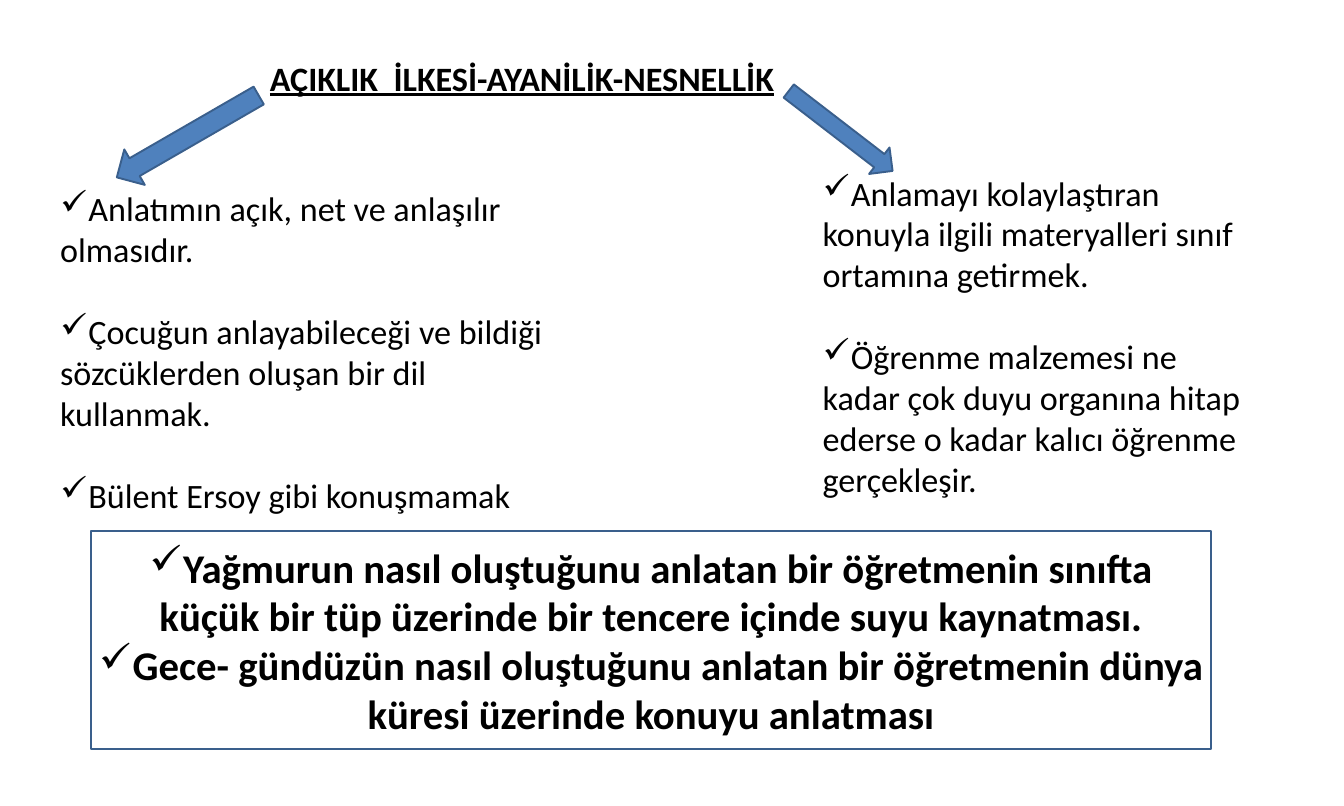
import pptx
import pptx.dml.color
import pptx.enum.shapes
import pptx.enum.text
import pptx.util
from dataclasses import dataclass
from lxml import etree
from pptx.oxml.ns import qn

Pt = pptx.util.Pt
RGBColor = pptx.dml.color.RGBColor
MSO_SHAPE = pptx.enum.shapes.MSO_SHAPE
PP_ALIGN = pptx.enum.text.PP_ALIGN
MSO_ANCHOR = pptx.enum.text.MSO_ANCHOR


@dataclass(frozen=True)
class Theme:
    font: str = "Calibri"
    text: RGBColor = RGBColor(0x00, 0x00, 0x00)
    paper: RGBColor = RGBColor(0xFF, 0xFF, 0xFF)
    arrow: RGBColor = RGBColor(0x4F, 0x81, 0xBD)
    outline: RGBColor = RGBColor(0x3A, 0x5F, 0x8C)
    body_size: int = 36
    example_size: int = 43
    outline_width: int = 2


theme = Theme()


def write_text(shape, texts, size, gap=0, bold=False, check=True,
               alignment=PP_ALIGN.LEFT, anchor=MSO_ANCHOR.TOP):
    """Fill a shape with one paragraph per text, optionally with check bullets."""
    frame = shape.text_frame
    frame.text = "\n".join(texts)
    frame.word_wrap = True
    frame.auto_size = pptx.enum.text.MSO_AUTO_SIZE.NONE
    frame.vertical_anchor = anchor
    for index, paragraph in enumerate(frame.paragraphs):
        properties = paragraph._p.get_or_add_pPr()
        properties.set("marL", "0")
        properties.set("indent", "0")
        if check:
            etree.SubElement(properties, qn("a:buFont"), typeface="Wingdings")
            etree.SubElement(properties, qn("a:buChar"), char="ü")
        paragraph.alignment = alignment
        paragraph.line_spacing = 1.0
        paragraph.space_before = Pt(gap if index else 0)
        paragraph.font.name = theme.font
        paragraph.font.size = Pt(size)
        paragraph.font.bold = bold
        paragraph.font.color.rgb = theme.text


def add_outlined(kind, left, top, width, height, fill):
    shape = slide.shapes.add_shape(kind, Pt(left), Pt(top), Pt(width), Pt(height))
    shape.shadow.inherit = False
    shape.fill.solid()
    shape.fill.fore_color.rgb = fill
    shape.line.color.rgb = theme.outline
    shape.line.width = Pt(theme.outline_width)
    return shape


presentation = pptx.Presentation()
presentation.slide_width = Pt(1417.5)
presentation.slide_height = Pt(850.5)
slide = presentation.slides.add_slide(presentation.slide_layouts.get_by_name("Two Content"))
slide.background.fill.solid()
slide.background.fill.fore_color.rgb = theme.paper

title, clarity_list, material_list = list(slide.placeholders)[:3]

title.left, title.top, title.width, title.height = Pt(277.5), Pt(56.5), Pt(580), Pt(52)
write_text(title, ["AÇIKLIK  İLKESİ-AYANİLİK-NESNELLİK"], theme.body_size,
           bold=True, check=False)
title.text_frame.paragraphs[0].font.underline = True

columns = [
    (clarity_list, 56.2, 194.4, 528.5, [
        "Anlatımın açık, net ve anlaşılır olmasıdır.",
        "Çocuğun anlayabileceği ve bildiği sözcüklerden oluşan bir dil kullanmak.",
        "Bülent Ersoy gibi konuşmamak",
    ]),
    (material_list, 860.4, 177.8, 461.5, [
        "Anlamayı kolaylaştıran konuyla ilgili materyalleri sınıf ortamına getirmek.",
        "Öğrenme malzemesi ne kadar çok duyu organına hitap ederse o kadar kalıcı "
        "öğrenme gerçekleşir.",
    ]),
]
for column, left, top, width, texts in columns:
    column.left, column.top, column.width, column.height = Pt(left), Pt(top), Pt(width), Pt(356.4)
    write_text(column, texts, theme.body_size, gap=theme.body_size * 1.2)

arrows = [
    (176.4, 57.6, 43.2, 172.8, 60),
    (869, 69.1, 35.3, 138.2, 307.6),
]
for left, top, width, height, rotation in arrows:
    arrow = add_outlined(MSO_SHAPE.DOWN_ARROW, left, top, width, height, theme.arrow)
    arrow.rotation = rotation

example_box = add_outlined(MSO_SHAPE.FLOWCHART_PROCESS, 95.8, 560.2, 1181.5, 230.4, theme.paper)
write_text(example_box, [
    "Yağmurun nasıl oluştuğunu anlatan bir öğretmenin sınıfta küçük bir tüp "
    "üzerinde bir tencere içinde suyu kaynatması.",
    "Gece- gündüzün nasıl oluştuğunu anlatan bir öğretmenin dünya küresi "
    "üzerinde konuyu anlatması",
], theme.example_size, bold=True, alignment=PP_ALIGN.CENTER, anchor=MSO_ANCHOR.MIDDLE)

presentation.save("out.pptx")
